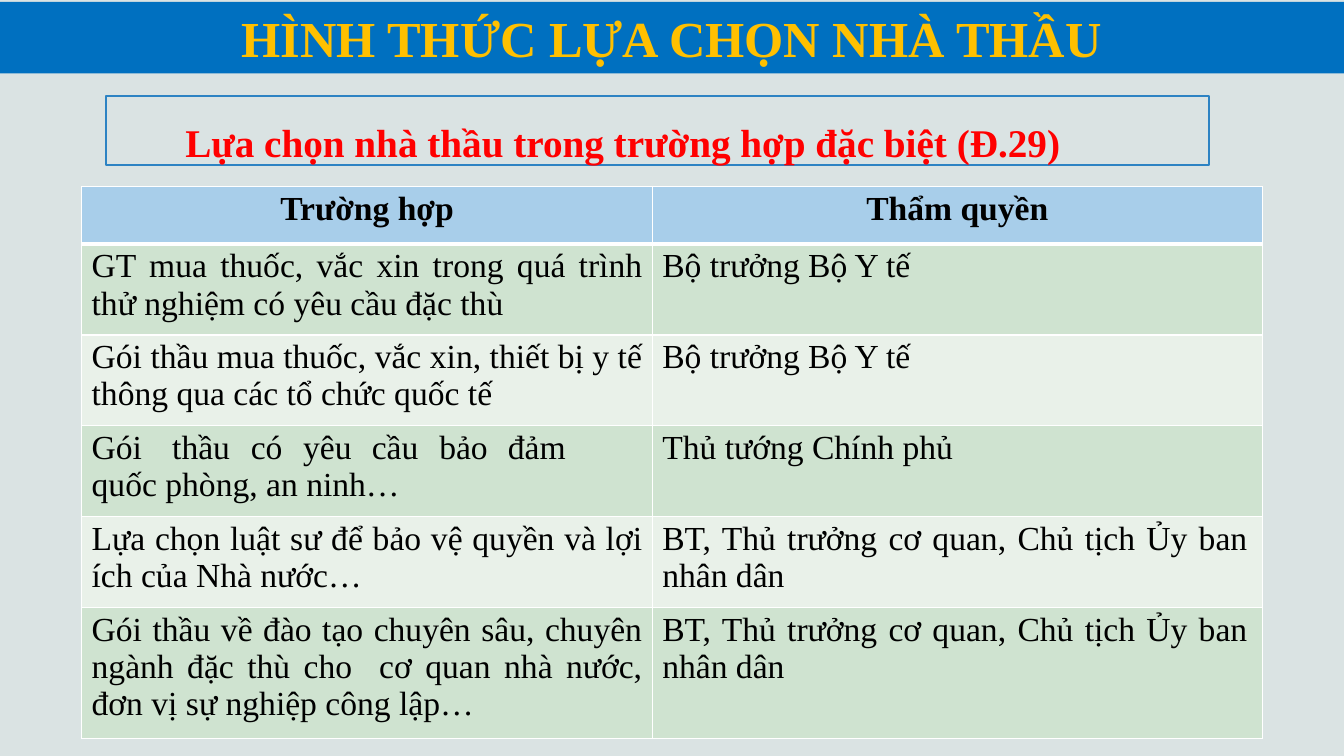
from pptx import Presentation, util as u
from pptx.dml.color import RGBColor
from pptx.enum import shapes, text
from pptx.oxml import parse_xml
from pptx.oxml.ns import nsdecls

FONT = "Times New Roman"
WIDTH, HEIGHT = 33.87, 19.05
HEADER_FILL, BAND_FILLS = "A8CEEA", ("CFE3D0", "E9F1E9")
LEFT, CENTER, JUSTIFY = (text.PP_ALIGN.LEFT, text.PP_ALIGN.CENTER,
                         text.PP_ALIGN.JUSTIFY)
COLUMN_WIDTHS = (14.38, 15.37)
RIGHT_MARGINS = (0.25, 0.37)
ROW_HEIGHTS = (1.45, 2.29, 2.29, 2.29, 2.29, 3.3)
TAB_STOPS = (2.03, 4.01, 5.33, 7.06, 8.76, 10.49, 12.47)
CASES = [
    ("Trường hợp", "Thẩm quyền"),
    ("GT mua thuốc, vắc xin trong quá trình thử nghiệm có yêu cầu đặc thù",
     "Bộ trưởng Bộ Y tế"),
    ("Gói thầu mua thuốc, vắc xin, thiết bị y tế thông qua các tổ chức quốc tế",
     "Bộ trưởng Bộ Y tế"),
    ("Gói\tthầu\tcó\tyêu\tcầu\tbảo\tđảm\tquốc phòng, an ninh…",
     "Thủ tướng Chính phủ"),
    ("Lựa chọn luật sư để bảo vệ quyền và lợi ích của Nhà nước…",
     "BT, Thủ trưởng cơ quan, Chủ tịch Ủy ban nhân dân"),
    ("Gói thầu về đào tạo chuyên sâu, chuyên ngành đặc thù cho  cơ quan nhà "
     "nước, đơn vị sự nghiệp công lập…",
     "BT, Thủ trưởng cơ quan, Chủ tịch Ủy ban nhân dân"),
]


def color(value):
    return RGBColor.from_string(value)


def write(frame, words, size=24, hue="000000", bold=False, align=LEFT, before=0):
    frame.word_wrap = True
    paragraph = frame.paragraphs[0]
    paragraph.alignment = align
    paragraph.space_before = u.Pt(before)
    run = paragraph.add_run()
    run.text = words
    run.font.name, run.font.size, run.font.bold = FONT, u.Pt(size), bold
    run.font.color.rgb = color(hue)
    return paragraph


def add_box(slide, left, top, width, height, fill=None, line=None):
    shape = slide.shapes.add_shape(shapes.MSO_SHAPE.RECTANGLE, u.Cm(left),
                                   u.Cm(top), u.Cm(width), u.Cm(height))
    shape.shadow.inherit = False
    if fill:
        shape.fill.solid()
        shape.fill.fore_color.rgb = color(fill)
    else:
        shape.fill.background()
    if line:
        shape.line.color.rgb = color(line)
        shape.line.width = u.Pt(1.56)
    else:
        shape.line.fill.background()
    return shape


def set_borders(cell, top, bottom):
    properties = cell._tc.get_or_add_tcPr()
    sides = (("lnL", 1), ("lnR", 1), ("lnT", top), ("lnB", bottom))
    for index, (side, points) in enumerate(sides):
        properties.insert(index, parse_xml(
            f'<a:{side} {nsdecls("a")} w="{u.Pt(points)}"><a:solidFill>'
            f'<a:srgbClr val="FFFFFF"/></a:solidFill></a:{side}>'))


def set_tabs(paragraph):
    stops = "".join(f'<a:tab pos="{u.Cm(stop)}" algn="l"/>' for stop in TAB_STOPS)
    paragraph._p.get_or_add_pPr().append(
        parse_xml(f'<a:tabLst {nsdecls("a")}>{stops}</a:tabLst>'))


def add_banner(slide, left, top, width, height):
    banner = add_box(slide, left, top, width, height, fill="0070C0")
    frame = banner.text_frame
    frame.vertical_anchor = text.MSO_ANCHOR.MIDDLE
    write(frame, "HÌNH THỨC LỰA CHỌN NHÀ THẦU", size=36, hue="FFC000",
          bold=True, align=CENTER)


def add_heading(slide, left, top, width, height):
    heading = add_box(slide, left, top, width, height, line="2D83C3")
    frame = heading.text_frame
    frame.margin_left = u.Cm(2)
    frame.margin_top = frame.margin_right = frame.margin_bottom = 0
    frame.vertical_anchor = text.MSO_ANCHOR.BOTTOM
    write(frame, "Lựa chọn nhà thầu trong trường hợp đặc biệt (Đ.29)",
          size=28, hue="FF0000", bold=True)


def add_cases(slide, left, top):
    table = slide.shapes.add_table(
        len(CASES), len(COLUMN_WIDTHS), u.Cm(left), u.Cm(top),
        u.Cm(sum(COLUMN_WIDTHS)), u.Cm(sum(ROW_HEIGHTS))).table
    for column, width in zip(table.columns, COLUMN_WIDTHS):
        column.width = u.Cm(width)
    for row, (height, entries) in enumerate(zip(ROW_HEIGHTS, CASES)):
        table.rows[row].height = u.Cm(height)
        header = row == 0
        for column, words in enumerate(entries):
            cell = table.cell(row, column)
            cell.margin_left = 0 if header else u.Cm(0.25)
            cell.margin_right = 0 if header else u.Cm(RIGHT_MARGINS[column])
            cell.margin_top, cell.margin_bottom = u.Cm(0.1), 0
            cell.fill.solid()
            cell.fill.fore_color.rgb = color(
                HEADER_FILL if header else BAND_FILLS[(row - 1) % 2])
            set_borders(cell, top=3 if row == 1 else 1, bottom=3 if header else 1)
            tabbed = "\t" in words
            align = CENTER if header else LEFT if tabbed else JUSTIFY
            paragraph = write(cell.text_frame, words, bold=header, align=align,
                              before=2.8)
            if tabbed:
                set_tabs(paragraph)


def main():
    presentation = Presentation()
    presentation.slide_width = u.Cm(WIDTH)
    presentation.slide_height = u.Cm(HEIGHT)
    slide = presentation.slides.add_slide(presentation.slide_layouts[6])
    slide.background.fill.solid()
    slide.background.fill.fore_color.rgb = color("DAE3E3")
    add_heading(slide, 2.67, 2.41, 27.79, 1.75)
    add_cases(slide, 2.06, 4.7)
    add_banner(slide, 0, 0.05, WIDTH, 1.8)
    presentation.save("out.pptx")


if __name__ == "__main__":
    main()
